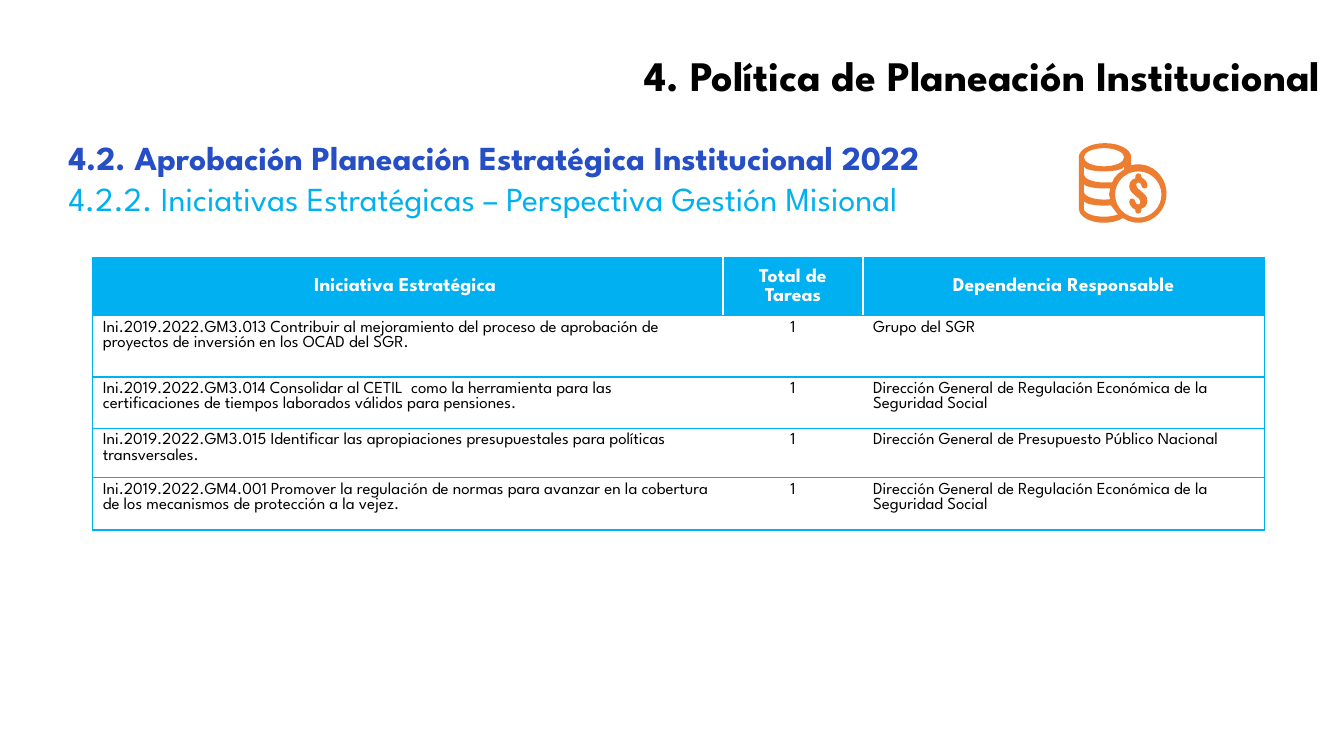
"""Build the slide of strategic initiatives for the institutional planning policy."""
from dataclasses import dataclass
from math import ceil, cos, radians, sin, tan

from lxml.etree import SubElement
from pptx import Presentation
from pptx.dml.color import RGBColor
from pptx.enum.text import MSO_ANCHOR as ANCHOR, MSO_AUTO_SIZE as AUTO, PP_ALIGN as ALIGN
from pptx.oxml.ns import qn
from pptx.util import Inches, Pt

BLACK = RGBColor(0x00, 0x00, 0x00)
WHITE = RGBColor(0xFF, 0xFF, 0xFF)
SKY = RGBColor(0x00, 0xB0, 0xF0)
ROYAL = RGBColor(0x26, 0x4F, 0xC6)
ORANGE = RGBColor(0xED, 0x7D, 0x31)
FONT = "League Spartan"
UNITS = 1000

Points = list[tuple[float, float]]


@dataclass
class Line:
    text: str
    size: float
    color: RGBColor
    bold: bool = False
    align: ALIGN = ALIGN.LEFT
    spacing: float | None = None


@dataclass
class Initiative:
    name: str
    tasks: int
    office: str


TITLE = [Line("4. Política de Planeación Institucional", 30, BLACK, True, ALIGN.RIGHT)]
HEADINGS = [
    Line("4.2. Aprobación Planeación Estratégica Institucional 2022", 24, ROYAL, True),
    Line("4.2.2. Iniciativas Estratégicas – Perspectiva Gestión Misional", 24, SKY),
]
HEADER = ["Iniciativa Estratégica ", "Total de Tareas", "Dependencia Responsable"]
REGULATION = "Dirección General de Regulación Económica de la Seguridad Social"
INITIATIVES = [
    Initiative("Ini.2019.2022.GM3.013 Contribuir al mejoramiento del proceso de aprobación de "
               "proyectos de inversión en los OCAD del SGR.", 1, "Grupo del SGR"),
    Initiative("Ini.2019.2022.GM3.014 Consolidar al CETIL  como la herramienta para las "
               "certificaciones de tiempos laborados válidos para pensiones.", 1, REGULATION),
    Initiative("Ini.2019.2022.GM3.015 Identificar las apropiaciones presupuestales para políticas "
               "transversales.", 1, "Dirección General de Presupuesto Público Nacional"),
    Initiative("Ini.2019.2022.GM4.001 Promover la regulación de normas para avanzar en la cobertura "
               "de los mecanismos de protección a la vejez.", 1, REGULATION),
]
COL_WIDTHS = [6.25, 1.39, 3.98]
ROW_HEIGHTS = [0.57, 0.61, 0.51, 0.49, 0.52]


def write(tf, lines: list[Line]) -> None:
    for i, line in enumerate(lines):
        p = tf.paragraphs[0] if i == 0 else tf.add_paragraph()
        r = p.add_run()
        r.text = line.text
        p.alignment = line.align
        p.space_before = Pt(0)
        if line.spacing:
            p.line_spacing = Pt(line.spacing)
        for key, value in {"name": FONT, "size": Pt(line.size), "bold": line.bold}.items():
            setattr(r.font, key, value)
        r.font.color.rgb = line.color


def fill_placeholder(s, box: tuple[float, ...], lines: list[Line]) -> None:
    s.left, s.top, s.width, s.height = map(Inches, box)
    tf = s.text_frame
    for key, value in {"word_wrap": True, "auto_size": AUTO.NONE,
                       "vertical_anchor": ANCHOR.TOP}.items():
        setattr(tf, key, value)
    write(tf, lines)
    for p in tf.paragraphs:
        pPr = p._p.get_or_add_pPr()
        pPr.set("marL", "0")
        pPr.set("indent", "0")
        SubElement(pPr, qn("a:buNone"))


def format_cell(cell, line: Line, fill: RGBColor, borders: dict[str, RGBColor]) -> None:
    write(cell.text_frame, [line])
    tcPr = cell._tc.get_or_add_tcPr()
    for side, color in borders.items():
        ln = SubElement(tcPr, qn(f"a:{side}"), w=str(Pt(1)))
        SubElement(SubElement(ln, qn("a:solidFill")), qn("a:srgbClr"), val=str(color))
    cell.fill.solid()
    cell.fill.fore_color.rgb = fill


def add_initiatives(shapes) -> None:
    rows = [HEADER] + [[i.name, str(i.tasks), i.office] for i in INITIATIVES]
    table = shapes.add_table(len(rows), len(HEADER), Inches(0.92), Inches(2.56),
                             Inches(sum(COL_WIDTHS)), Inches(sum(ROW_HEIGHTS))).table
    for col, width in zip(table.columns, COL_WIDTHS):
        col.width = Inches(width)
    for row, height in zip(table.rows, ROW_HEIGHTS):
        row.height = Inches(height)
    last = len(HEADER) - 1
    for i, row in enumerate(rows):
        for j, text in enumerate(row):
            cell = table.cell(i, j)
            borders = {"lnL": WHITE if j else SKY, "lnR": WHITE if j < last else SKY,
                       "lnT": SKY, "lnB": SKY}
            if i == 0:
                cell.vertical_anchor = ANCHOR.MIDDLE
                line = Line(text, 14, WHITE, True, ALIGN.CENTER, 13.6)
            else:
                line = Line(text, 12, BLACK, False, ALIGN.CENTER if j == 1 else ALIGN.LEFT, 10.9)
            format_cell(cell, line, WHITE if i else SKY, borders)


def arc(cx: float, cy: float, rx: float, ry: float, start: float, end: float) -> Points:
    count = ceil(abs(end - start) / 90)
    step = radians((end - start) / count)
    k = 4 / 3 * tan(step / 4)
    points = [(cx + rx * cos(radians(start)), cy + ry * sin(radians(start)))]
    for n in range(count):
        a = radians(start) + n * step
        b = a + step
        points += [(cx + rx * (cos(a) - k * sin(a)), cy + ry * (sin(a) + k * cos(a))),
                   (cx + rx * (cos(b) + k * sin(b)), cy + ry * (sin(b) - k * cos(b))),
                   (cx + rx * cos(b), cy + ry * sin(b))]
    return points


def join(*parts: Points) -> Points:
    points = list(parts[0])
    for part in parts[1:]:
        points += [points[-1], part[0], *part]
    return points


def add_outline(shapes, contours: list[Points]) -> None:
    scaled = [[(x * UNITS, y * UNITS) for x, y in contour] for contour in contours]
    builder = shapes.build_freeform(*scaled[0][0], scale=Inches(1) / UNITS)
    for i, contour in enumerate(scaled):
        if i:
            builder.move_to(*contour[0])
        builder.add_line_segments(contour[1:], close=True)
    s = builder.convert_to_shape()
    segments = list(s._element.iter(qn("a:lnTo")))
    for first, second, third in zip(segments[::3], segments[1::3], segments[2::3]):
        first.tag = qn("a:cubicBezTo")
        for segment in (second, third):
            first.append(segment[0])
            segment.getparent().remove(segment)
    s.shadow.inherit = False
    s.fill.solid()
    s.fill.fore_color.rgb = ORANGE
    s.line.fill.background()


def add_coins(shapes) -> None:
    silhouette = join(arc(10.96, 1.56, 0.26, 0.14, 180, 360),
                      arc(11.29, 1.92, 0.28, 0.29, -105, 120),
                      arc(10.95, 2.07, 0.25, 0.14, 42, 180), [(10.7, 1.56)])
    top_face = arc(10.95, 1.56, 0.2, 0.09, 0, 360)
    front_face = arc(11.29, 1.93, 0.23, 0.23, 0, 360)
    upper_band = join(arc(10.95, 1.65, 0.2, 0.05, 180, 0),
                      [(11.15, 1.68), (11.1, 1.71), (11.05, 1.75), (11.03, 1.81)],
                      arc(10.95, 1.73, 0.2, 0.08, 90, 180))
    middle_band = join(arc(10.95, 1.82, 0.2, 0.05, 180, 72), [(11, 1.93)],
                       arc(10.95, 1.9, 0.2, 0.08, 72, 180))
    lower_band = join(arc(10.95, 1.99, 0.2, 0.05, 180, 70), [(11.09, 2.13)],
                      arc(10.95, 2.07, 0.2, 0.08, 45, 180))
    add_outline(shapes, [silhouette, top_face, front_face, upper_band, middle_band, lower_band])

    half = join(
        [(11.29, 1.72), (11.27, 1.72), (11.26, 1.74), (11.26, 1.75)],
        [(11.26, 1.77), (11.22, 1.78), (11.2, 1.81), (11.2, 1.85),
         (11.2, 1.9), (11.24, 1.92), (11.27, 1.95), (11.29, 1.96), (11.31, 1.98), (11.31, 2),
         (11.32, 2.01), (11.3, 2.03), (11.29, 2.03), (11.27, 2.03), (11.26, 2.01), (11.26, 2),
         (11.26, 1.98), (11.24, 1.97), (11.23, 1.97), (11.21, 1.97), (11.2, 1.98), (11.2, 2),
         (11.2, 2.03), (11.22, 2.06), (11.26, 2.08)],
        [(11.26, 2.09), (11.26, 2.11), (11.27, 2.12), (11.29, 2.12)])
    turned = [(22.58 - x, 3.84 - y) for x, y in half]
    add_outline(shapes, [half + turned[1:]])


def main() -> None:
    prs = Presentation()
    prs.slide_width, prs.slide_height = Inches(13.33), Inches(7.5)
    slide = prs.slides.add_slide(prs.slide_layouts[1])
    fill_placeholder(slide.shapes.title, (3.83, 0.44, 9.37, 0.61), TITLE)
    fill_placeholder(slide.placeholders[1], (0.58, 1.31, 12.75, 0.91), HEADINGS)
    add_initiatives(slide.shapes)
    add_coins(slide.shapes.add_group_shape().shapes)
    prs.save("out.pptx")


if __name__ == "__main__":
    main()
